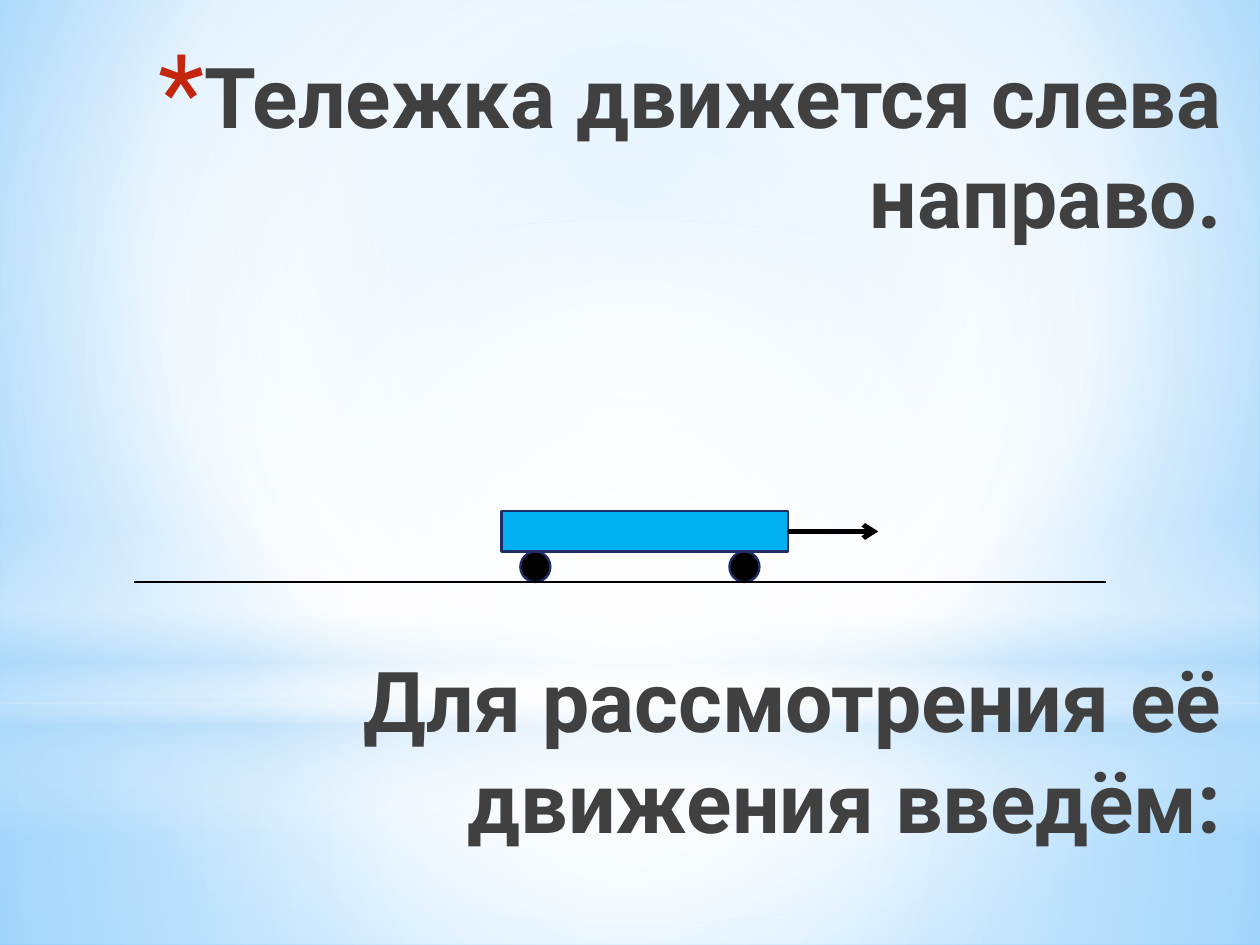
import dataclasses

import lxml.etree
import pptx
import pptx.dml.color
import pptx.enum.shapes
import pptx.enum.text
import pptx.oxml.ns
import pptx.util

SHAPES = pptx.enum.shapes.MSO_SHAPE


@dataclasses.dataclass(frozen=True)
class Theme:
    """Colours, type sizes and line widths of the deck."""
    font: str = "Roboto"
    title_size: int = 48
    bullet_percent: int = 128
    text: str = "404040"
    bullet: str = "C3260C"
    cart: str = "00B0F0"
    outline: str = "1F2E69"
    black: str = "000000"
    white: str = "FFFFFF"
    mist: str = "B4DCFA"
    sky: str = "9ED5FF"
    deep_sky: str = "5BB9FF"
    outline_width: float = 1.25
    arrow_width: float = 2.75
    road_width: float = 1.5


THEME = Theme()


@dataclasses.dataclass(frozen=True)
class Box:
    """A rectangle in inches."""
    left: float
    top: float
    width: float
    height: float

    def inner(self, left, top, width, height):
        """Return the inner box given by shares of this one."""
        return Box(self.left + left * self.width, self.top + top * self.height,
                   width * self.width, height * self.height)

    def lengths(self):
        """Return the four lengths for python-pptx."""
        return [pptx.util.Inches(value) for value in dataclasses.astuple(self)]


def colour(code):
    """Turn a hex code into a colour."""
    return pptx.dml.color.RGBColor.from_string(code)


def add_node(parent, tag, **attributes):
    """Append a drawing element with the given attributes."""
    node = lxml.etree.SubElement(parent, pptx.oxml.ns.qn(tag))
    for name, value in attributes.items():
        node.set(name, str(value))
    return node


def set_gradient(fill, owner, stops, centre=None, angle=None):
    """Fill with (position, colour, opacity) stops, radial or linear."""
    fill.gradient()
    gradient = owner.find(".//" + pptx.oxml.ns.qn("a:gradFill"))
    for child in list(gradient):
        gradient.remove(child)
    stop_list = add_node(gradient, "a:gsLst")
    for position, code, opacity in stops:
        stop = add_node(stop_list, "a:gs", pos=position * 1000)
        tone = add_node(stop, "a:srgbClr", val=code)
        if opacity < 100:
            add_node(tone, "a:alpha", val=opacity * 1000)
    if centre:
        radial = add_node(gradient, "a:path", path="circle")
        add_node(radial, "a:fillToRect",
                 **{side: share * 1000 for side, share in zip("ltrb", centre)})
    else:
        add_node(gradient, "a:lin", ang=angle * 60000, scaled=1)


def add_figure(page, kind, box, fill=None, line=None):
    """Add a preset shape with a plain fill and outline."""
    figure = page.shapes.add_shape(kind, *box.lengths())
    figure.shadow.inherit = False
    if fill:
        figure.fill.solid()
        figure.fill.fore_color.rgb = colour(fill)
    if line:
        figure.line.color.rgb = colour(line)
        figure.line.width = pptx.util.Pt(THEME.outline_width)
    else:
        figure.line.fill.background()
    return figure


def add_line(page, box, width, arrow=False):
    """Draw a black line along the top edge of the box."""
    left, top, length, _ = box.lengths()
    line = page.shapes.add_connector(
        pptx.enum.shapes.MSO_CONNECTOR.STRAIGHT, left, top, left + length, top)
    line.line.color.rgb = colour(THEME.black)
    line.line.width = pptx.util.Pt(width)
    if arrow:
        add_node(line.line._get_or_add_ln(), "a:tailEnd", type="arrow")
    add_node(line._element.spPr, "a:effectLst")


def write_text(para, text, size, code, bold=False, before=0, bullet=None):
    """Write a right-aligned paragraph with an optional bullet."""
    para.alignment = pptx.enum.text.PP_ALIGN.RIGHT
    para.space_before = pptx.util.Pt(before)
    span = para.add_run()
    span.text = text
    span.font.name = THEME.font
    span.font.size = pptx.util.Pt(size)
    span.font.bold = bold
    span.font.color.rgb = colour(code)
    settings = para._p.get_or_add_pPr()
    indent = pptx.util.Inches(0.35)
    settings.set("marL", str(indent))
    settings.set("indent", str(-indent if bullet else 0))
    if bullet:
        add_node(add_node(settings, "a:buClr"), "a:srgbClr", val=THEME.bullet)
        add_node(settings, "a:buSzPct", val=THEME.bullet_percent * 1000)
        add_node(settings, "a:buFont", typeface=THEME.font)
        add_node(settings, "a:buChar", char=bullet)


def draw_backdrop(page, box):
    """Paint the sky, the horizon band and the central glow."""
    white, mist = THEME.white, THEME.mist
    set_gradient(page.background.fill, page._element,
                 [(0, THEME.sky, 100), (60, white, 100), (100, THEME.deep_sky, 100)],
                 centre=(20, 10, 20, 60))
    middle = (50, 50, 50, 50)
    horizon = 0.744
    layers = [
        (SHAPES.RECTANGLE, horizon, 1 - horizon, middle,
         [(0, white, 91), (37, white, 76), (100, mist, 79)]),
        (SHAPES.RECTANGLE, 0, horizon, middle,
         [(0, white, 89), (48, white, 62), (100, mist, 79)]),
        (SHAPES.RECTANGLE, 0.55, 0.333, None,
         [(0, white, 0), (29, white, 30), (45, mist, 40),
          (55, white, 26), (65, mist, 60), (100, white, 0)]),
        (SHAPES.OVAL, 0.233, horizon, middle, [(0, white, 100), (56, white, 0)]),
    ]
    for kind, top, height, centre, stops in layers:
        layer = add_figure(page, kind, box.inner(0, top, 1, height))
        set_gradient(layer.fill, layer._element, stops, centre, angle=90)


def place_title(page, box):
    """Set the two statements above and below the cart."""
    title = page.shapes.title
    title.left, title.top, title.width, title.height = box.lengths()
    page.shapes._spTree.append(title._element)
    frame = title.text_frame
    frame.word_wrap = True
    frame.auto_size = pptx.enum.text.MSO_AUTO_SIZE.NONE
    frame.vertical_anchor = pptx.enum.text.MSO_ANCHOR.TOP
    look = dict(size=THEME.title_size, code=THEME.text, bold=True)
    write_text(frame.paragraphs[0], "Тележка движется слева направо.", bullet="*", **look)
    write_text(frame.add_paragraph(), "Для рассмотрения её движения введём:",
               before=THEME.title_size * 4.8, **look)


def draw_cart(page, box):
    """Draw the cart with its wheels and the arrow of motion."""
    body = box.inner(0, 0, 0.76, 0.57)
    add_figure(page, SHAPES.RECTANGLE, body, THEME.cart, THEME.outline)
    for left in (0.05, 0.605):
        add_figure(page, SHAPES.FLOWCHART_CONNECTOR, box.inner(left, 0.57, 0.08, 0.43),
                   THEME.black, THEME.outline)
    add_line(page, box.inner(0.76, 0.285, 0.24, 0), THEME.arrow_width, arrow=True)


def main():
    """Build and save the deck."""
    deck = pptx.Presentation()
    deck.slide_width, deck.slide_height = pptx.util.Inches(10), pptx.util.Inches(7.5)
    page = deck.slides.add_slide(deck.slide_layouts.get_by_name("Title Only"))
    whole = Box(0, 0, 10, 7.5)
    draw_backdrop(page, whole)
    place_title(page, whole.inner(0.02, 0.04, 0.96, 0.91))
    draw_cart(page, whole.inner(0.398, 0.541, 0.299, 0.075))
    add_line(page, whole.inner(0.106, 0.616, 0.772, 0), THEME.road_width)
    deck.save("out.pptx")


if __name__ == "__main__":
    main()
